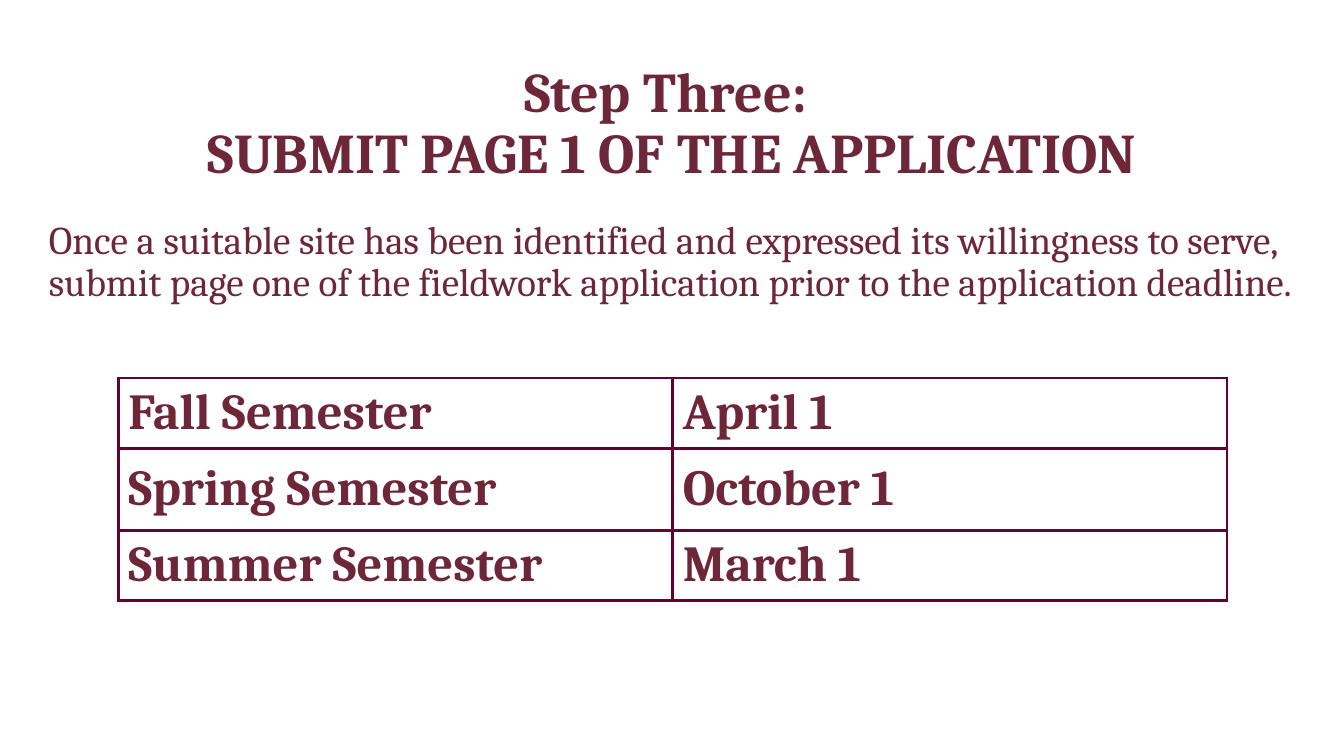
from dataclasses import dataclass

from lxml import etree
from pptx import Presentation
from pptx import util as u
from pptx.dml.color import RGBColor
from pptx.enum import text
from pptx.oxml import ns


@dataclass(frozen=True)
class Theme:
    font: str = "Cambria"
    ink: str = "6E2639"
    border: str = "660033"
    paper: str = "FFFFFF"
    title_size: int = 40
    body_size: int = 28
    table_size: int = 36
    border_width: float = 2.25
    line_spacing: float = 0.9


THEME = Theme()
WIDTH, HEIGHT = u.Inches(13.33), u.Inches(7.5)
DEADLINES = [
    ("Fall Semester", "April 1"),
    ("Spring Semester", "October 1"),
    ("Summer Semester", "March 1"),
]
ROW_HEIGHTS = [0.66, 0.81, 0.7]


def box(left, top, width, height):
    """Turn shares of the slide's size into lengths."""
    return int(left * WIDTH), int(top * HEIGHT), int(width * WIDTH), int(height * HEIGHT)


def add_run(paragraph, words, size, bold=False):
    run = paragraph.add_run()
    run.text = words
    run.font.name = THEME.font
    run.font.size = u.Pt(size)
    run.font.bold = bold
    run.font.color.rgb = RGBColor.from_string(THEME.ink)


def set_title(slide, lines):
    title = slide.shapes.title
    title.left, title.top, title.width, title.height = box(0, 0.085, 1, 0.16)
    frame = title.text_frame
    frame.word_wrap = True
    frame.auto_size = text.MSO_AUTO_SIZE.NONE
    frame.vertical_anchor = text.MSO_ANCHOR.MIDDLE
    paragraph = frame.paragraphs[0]
    paragraph.alignment = text.PP_ALIGN.CENTER
    paragraph.line_spacing = THEME.line_spacing
    for index, line in enumerate(lines):
        if index:
            paragraph.add_line_break()
        add_run(paragraph, line, THEME.title_size, bold=True)


def add_body(slide, words):
    frame = slide.shapes.add_textbox(*box(0.029, 0.285, 0.942, 0.2)).text_frame
    frame.word_wrap = True
    paragraph = frame.paragraphs[0]
    paragraph.line_spacing = THEME.line_spacing
    add_run(paragraph, words, THEME.body_size)


def add_borders(cell):
    properties = cell._tc.get_or_add_tcPr()
    for position, side in enumerate(("lnL", "lnR", "lnT", "lnB")):
        line = etree.Element(ns.qn(f"a:{side}"), w=str(u.Pt(THEME.border_width)))
        fill = etree.SubElement(line, ns.qn("a:solidFill"))
        etree.SubElement(fill, ns.qn("a:srgbClr"), val=THEME.border)
        properties.insert(position, line)


def add_deadline_table(slide, rows):
    frame = slide.shapes.add_table(len(rows), 2, *box(0.088, 0.5, 0.825, 0.29))
    table = frame.table
    table.first_row = table.horz_banding = False
    for row, height, words in zip(table.rows, ROW_HEIGHTS, rows):
        row.height = u.Inches(height)
        for cell, label in zip(row.cells, words):
            cell.fill.solid()
            cell.fill.fore_color.rgb = RGBColor.from_string(THEME.paper)
            cell.vertical_anchor = text.MSO_ANCHOR.MIDDLE
            add_run(cell.text_frame.paragraphs[0], label, THEME.table_size, bold=True)
            add_borders(cell)


def main():
    presentation = Presentation()
    presentation.slide_width, presentation.slide_height = WIDTH, HEIGHT
    title_only = presentation.slide_layouts[5]
    slide = presentation.slides.add_slide(title_only)
    set_title(slide, ["Step Three: ", "SUBMIT PAGE 1 OF THE APPLICATION"])
    add_body(
        slide,
        "Once a suitable site has been identified and expressed its willingness to serve, "
        "submit page one of the fieldwork application prior to the application deadline.",
    )
    add_deadline_table(slide, DEADLINES)
    presentation.save("out.pptx")


if __name__ == "__main__":
    main()
